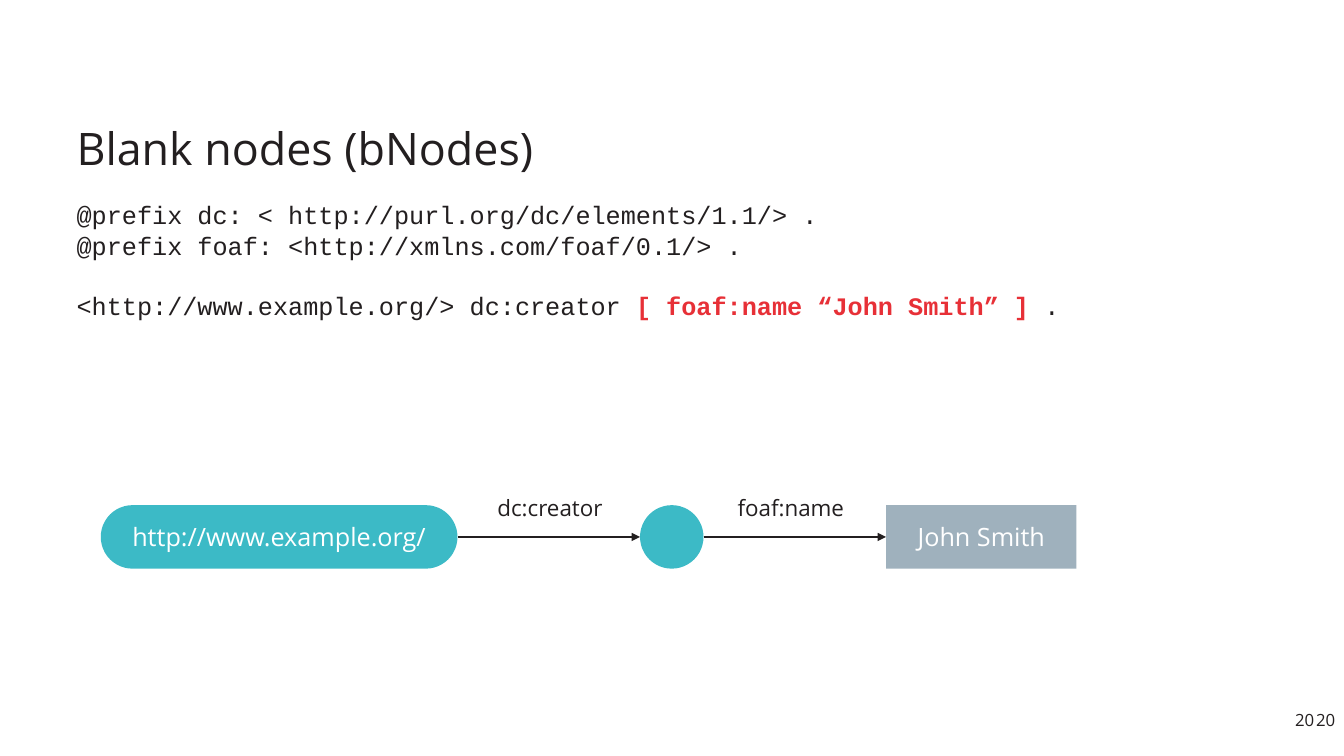
from dataclasses import dataclass

from lxml.etree import SubElement
from pptx import Presentation
from pptx.dml.color import RGBColor
from pptx.enum.shapes import MSO_CONNECTOR, MSO_SHAPE as Preset
from pptx.enum.text import MSO_ANCHOR as Anchor, PP_ALIGN as Align
from pptx.oxml.ns import qn
from pptx.shapes.autoshape import Shape
from pptx.shapes.connector import Connector
from pptx.text.text import _Paragraph as Paragraph
from pptx.util import Cm, Pt

INK = RGBColor(0x23, 0x1F, 0x20)
RED = RGBColor(0xE7, 0x30, 0x37)
TEAL = RGBColor(0x3C, 0xBA, 0xC6)
GREY = RGBColor(0x9F, 0xB1, 0xBD)
WHITE = RGBColor(0xFF, 0xFF, 0xFF)
SANS = "Open Sans"
MONO = "Courier New"

MARGIN, CONTENT_WIDTH = 1.73, 30.4
NODE_TOP, NODE_HEIGHT = 12.73, 1.6
NODE_MIDDLE = NODE_TOP + NODE_HEIGHT / 2
NODE_GAP = 4.6
LABEL_TOP, LABEL_WIDTH, LABEL_HEIGHT = 12.32, 3.4, 0.94
RIGHT_SIDE, LEFT_SIDE = 3, 1


@dataclass(frozen=True)
class Node:
    text: str
    preset: Preset
    width: float
    fill: RGBColor


@dataclass(frozen=True)
class Predicate:
    text: str
    label_left: float


@dataclass(frozen=True)
class Piece:
    text: str
    color: RGBColor = INK
    bold: bool = False


SUBJECT = Node("http://www.example.org/", Preset.ROUNDED_RECTANGLE, 8.99, TEAL)
BLANK = Node("", Preset.OVAL, NODE_HEIGHT, TEAL)
VALUE = Node("John Smith", Preset.RECTANGLE, 4.8, GREY)
CREATOR = Predicate("dc:creator", 12.16)
NAME = Predicate("foaf:name", 18.23)

TURTLE_LINES = [
    [Piece("@prefix dc: < http://purl.org/dc/elements/1.1/> .")],
    [Piece("@prefix foaf: <http://xmlns.com/foaf/0.1/> .")],
    [],
    [
        Piece("<http://www.example.org/> dc:creator "),
        Piece("[ foaf:name “John Smith” ] ", RED, True),
        Piece("."),
    ],
]

deck = Presentation()
deck.slide_width, deck.slide_height = Cm(33.87), Cm(19.05)
slide = deck.slides.add_slide(deck.slide_layouts[6])


def add_run(paragraph: Paragraph, piece: Piece, size: float, font: str) -> None:
    run = paragraph.add_run()
    run.text = piece.text
    run.font.name, run.font.size = font, Pt(size)
    run.font.bold = piece.bold
    run.font.color.rgb = piece.color


def add_text_box(left: float, top: float, width: float, height: float,
                 anchor: Anchor = Anchor.TOP, align: Align = Align.LEFT,
                 wrap: bool = True, inset: float = 0.1) -> Paragraph:
    box = slide.shapes.add_textbox(Cm(left), Cm(top), Cm(width), Cm(height))
    frame = box.text_frame
    frame.word_wrap = wrap
    frame.vertical_anchor = anchor
    frame.margin_left = frame.margin_right = Cm(0.2)
    frame.margin_top = frame.margin_bottom = Cm(inset)
    frame.paragraphs[0].alignment = align
    return frame.paragraphs[0]


def add_node(node: Node, left: float) -> Shape:
    shape = slide.shapes.add_shape(
        node.preset, Cm(left), Cm(NODE_TOP), Cm(node.width), Cm(NODE_HEIGHT))
    shape.shadow.inherit = False
    shape.fill.solid()
    shape.fill.fore_color.rgb = node.fill
    shape.line.fill.background()
    if node.preset == Preset.ROUNDED_RECTANGLE:
        shape.adjustments[0] = 0.5
    if node.text:
        frame = shape.text_frame
        frame.word_wrap = False
        frame.vertical_anchor = Anchor.MIDDLE
        frame.paragraphs[0].alignment = Align.CENTER
        add_run(frame.paragraphs[0], Piece(node.text, WHITE), 18, SANS)
    return shape


def add_arrow(predicate: Predicate, start: float) -> Connector:
    arrow = slide.shapes.add_connector(
        MSO_CONNECTOR.STRAIGHT, Cm(start), Cm(NODE_MIDDLE),
        Cm(start + NODE_GAP), Cm(NODE_MIDDLE))
    arrow.line.color.rgb = INK
    arrow.line.width = Pt(1.5)
    SubElement(arrow.line._get_or_add_ln(), qn("a:tailEnd"), type="triangle")
    SubElement(arrow._element.spPr, qn("a:effectLst"))
    label = add_text_box(predicate.label_left, LABEL_TOP, LABEL_WIDTH, LABEL_HEIGHT,
                         Anchor.MIDDLE, Align.CENTER, wrap=False)
    add_run(label, Piece(predicate.text), 16, SANS)
    return arrow


# Title
title = add_text_box(MARGIN, 1.93, CONTENT_WIDTH, 2.59, Anchor.BOTTOM)
title.line_spacing = 0.9
add_run(title, Piece("Blank nodes (bNodes)"), 32, SANS)

# Turtle code
turtle = add_text_box(MARGIN, 4.93, CONTENT_WIDTH, 3.99)
for number, pieces in enumerate(TURTLE_LINES):
    if number:
        turtle.add_line_break()
    for piece in pieces:
        add_run(turtle, piece, 18, MONO)
# Line breaks take the code size as well
for line_break in turtle._p.findall(qn("a:br")):
    SubElement(line_break, qn("a:rPr"), sz="1800")

# Graph nodes, left to right with equal gaps
subject_left = 2.54
blank_left = subject_left + SUBJECT.width + NODE_GAP
value_left = blank_left + BLANK.width + NODE_GAP
subject = add_node(SUBJECT, subject_left)
add_node(BLANK, blank_left)
value = add_node(VALUE, value_left)

# Predicates between the nodes
creator = add_arrow(CREATOR, subject_left + SUBJECT.width)
creator.begin_connect(subject, RIGHT_SIDE)
name = add_arrow(NAME, blank_left + BLANK.width)
name.end_connect(value, LEFT_SIDE)

# Page numbers
for page_left in (32.13, 32.66):
    page = add_text_box(page_left, 17.73, 1.19, 0.79, align=Align.RIGHT, inset=0.15)
    add_run(page, Piece("20"), 12, SANS)

deck.save("out.pptx")
